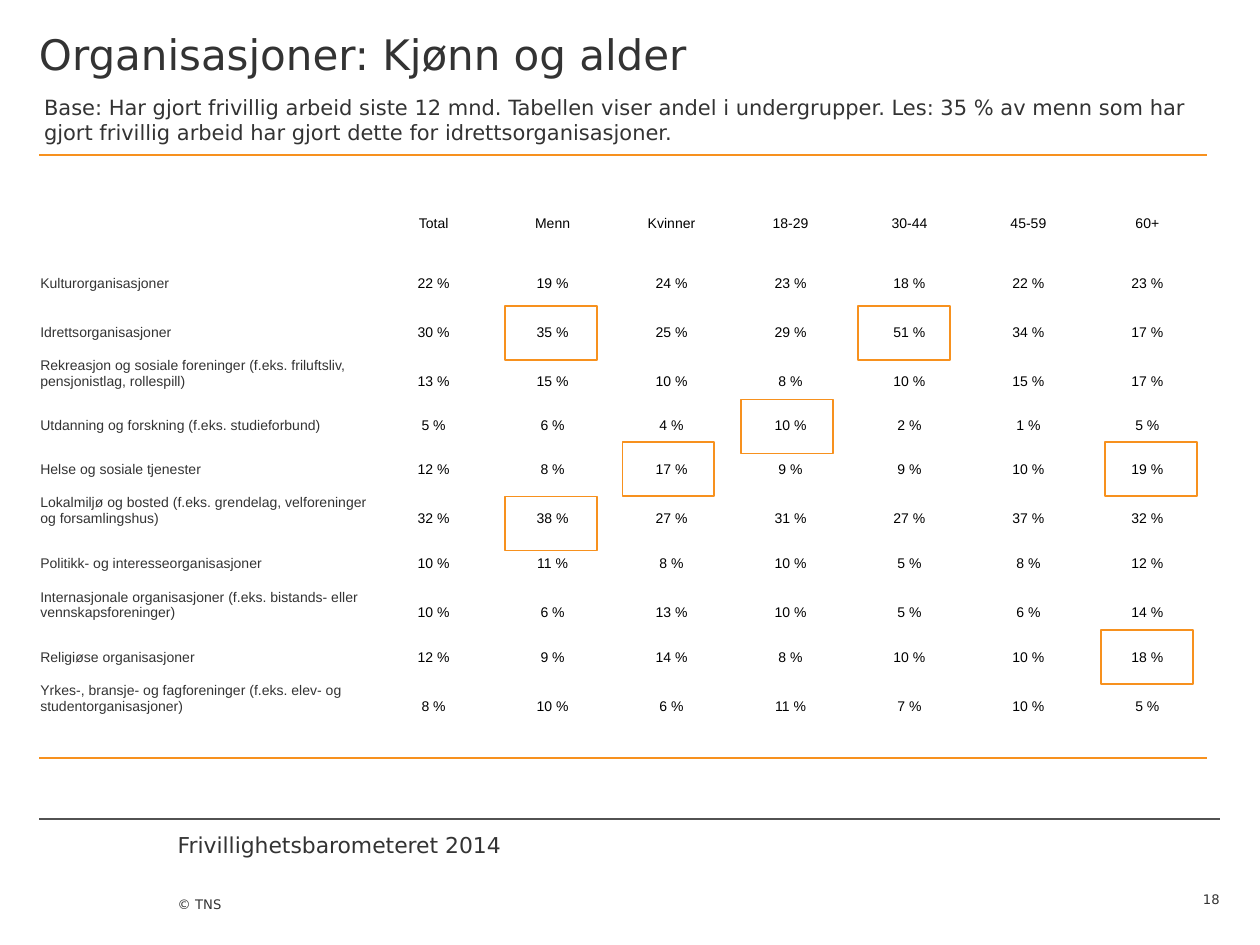
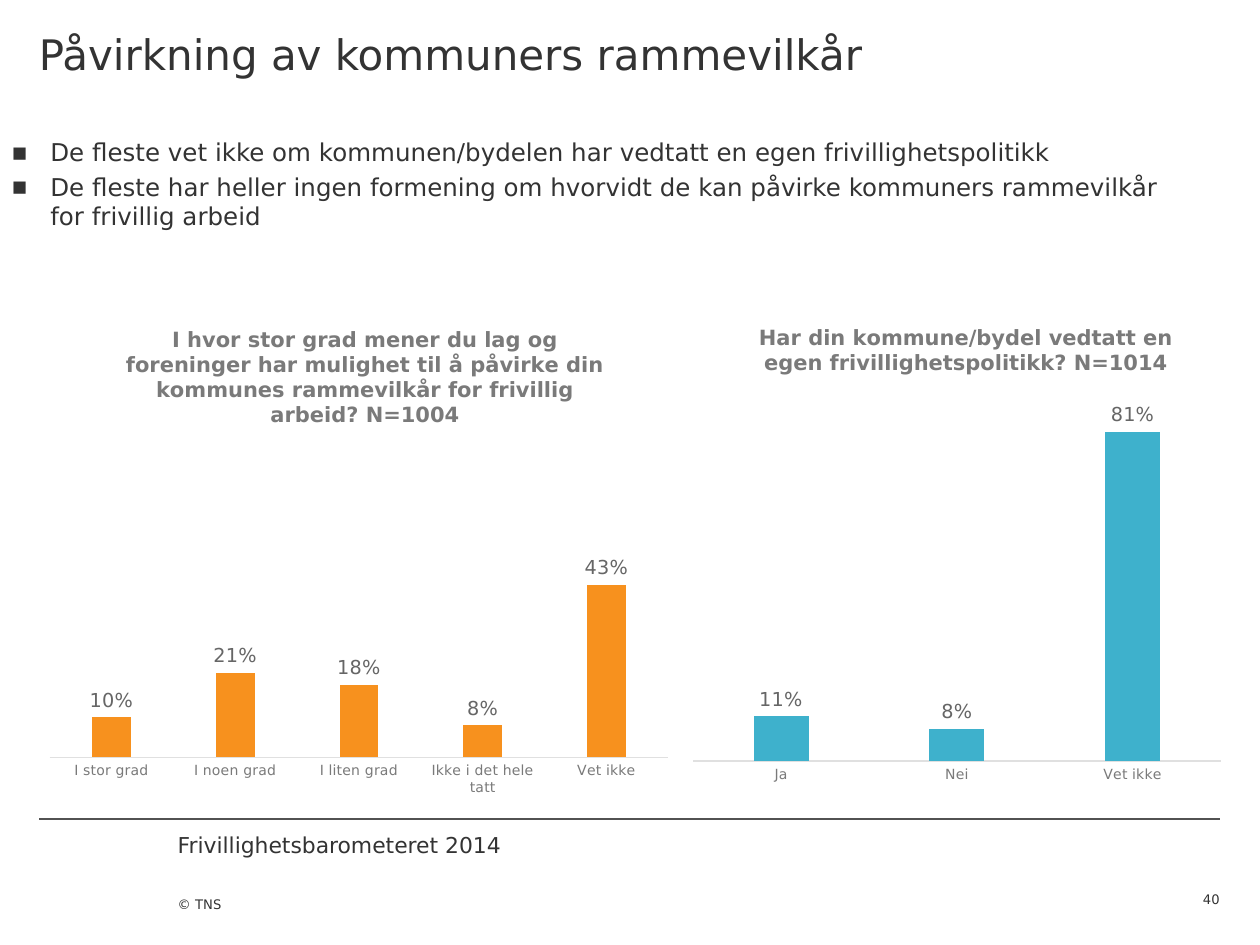
from lxml.etree import SubElement
from pptx import Presentation
from pptx.chart.data import CategoryChartData
from pptx.dml.color import RGBColor
from pptx.enum.chart import XL_CHART_TYPE, XL_LABEL_POSITION, XL_TICK_LABEL_POSITION, XL_TICK_MARK
from pptx.enum.shapes import MSO_CONNECTOR, MSO_SHAPE
from pptx.enum.text import MSO_ANCHOR, PP_ALIGN
from pptx.oxml import parse_xml
from pptx.oxml.ns import nsdecls, qn
from pptx.util import Inches, Pt

ORANGE, TEAL, DARK, BLACK = "F7911E", "3EB1CC", "333333", "000000"
RULE, AXIS, MUTED, LABEL = "525252", "E0E0E0", "7A7A7A", "666666"
SANS = "DejaVu Sans"
PLAIN_TABLE = "{2D5ABB26-0587-4C30-8999-92F81FD0307C}"
PLOT_MARGIN = 1 / 60

HEADERS = ["Total", "Menn", "Kvinner", "18-29", "30-44", "45-59", "60+"]
ORGANISATIONS = [
    ("Kulturorganisasjoner", 22, 19, 24, 23, 18, 22, 23),
    ("Idrettsorganisasjoner", 30, 35, 25, 29, 51, 34, 17),
    ("Rekreasjon og sosiale foreninger (f.eks. friluftsliv, pensjonistlag, rollespill)",
     13, 15, 10, 8, 10, 15, 17),
    ("Utdanning og forskning (f.eks. studieforbund)", 5, 6, 4, 10, 2, 1, 5),
    ("Helse og sosiale tjenester", 12, 8, 17, 9, 9, 10, 19),
    ("Lokalmiljø og bosted (f.eks. grendelag, velforeninger og forsamlingshus)",
     32, 38, 27, 31, 27, 37, 32),
    ("Politikk- og interesseorganisasjoner", 10, 11, 8, 10, 5, 8, 12),
    ("Internasjonale organisasjoner (f.eks. bistands- eller vennskapsforeninger)",
     10, 6, 13, 10, 5, 6, 14),
    ("Religiøse organisasjoner", 12, 9, 14, 8, 10, 10, 18),
    ("Yrkes-, bransje- og fagforeninger (f.eks. elev- og studentorganisasjoner)",
     8, 10, 6, 11, 7, 10, 5),
]
ROW_HEIGHTS = [0.36, 0.36, 0.36, 0.39, 0.39, 0.35, 0.35, 0.39, 0.36, 0.39, 0.35, 0.39, 0.35]
HIGHLIGHTS = [(4.01, 2.43), (4.01, 3.94), (4.94, 3.51), (5.88, 3.17),
              (6.81, 2.43), (8.77, 3.51), (8.74, 5)]


def rgb(value):
    """Turn a hex string into a colour."""
    return RGBColor.from_string(value)


def set_attrs(obj, **values):
    """Set each named attribute on an object."""
    for name, value in values.items():
        setattr(obj, name, value)


def set_font(font, size, color=DARK, name=SANS, bold=False):
    """Give a font its size, colour, face and weight."""
    set_attrs(font, size=Pt(size), name=name, bold=bold)
    font.color.rgb = rgb(color)


def set_line(line, color, width):
    """Give a line its colour and width."""
    line.color.rgb = rgb(color)
    line.width = Pt(width)


def set_layout(parent, index, **values):
    """Place a chart part by fractions of the chart."""
    for old in parent.findall(qn("c:layout")):
        parent.remove(old)
    layout = parse_xml(f"<c:layout {nsdecls('c')}/>")
    manual = SubElement(layout, qn("c:manualLayout"))
    for name, value in values.items():
        SubElement(manual, qn(f"c:{name}")).set("val", str(value))
    parent.insert(index, layout)


class Deck:
    """Hold the shared style and the current slide."""

    def __init__(self):
        """Start an empty presentation."""
        self.prs = Presentation()
        set_attrs(self.prs, slide_width=Inches(10), slide_height=Inches(7.5))
        self.s = None

    def slide(self, title, number):
        """Add a slide with its title, footer rule and footer texts."""
        self.s = self.prs.slides.add_slide(self.prs.slide_layouts[6])
        self.rule(0.31, 9.68, 6.5)
        self.text(1.41, 6.6, 3.31, 0.42, ["Frivillighetsbarometeret 2014"], 12.5)
        self.text(1.41, 6.92, 2.78, 0.58, ["© TNS"], 7.5, bottom=0.4, anchor=MSO_ANCHOR.BOTTOM)
        self.text(0.31, 0, 9.37, 1.13, [title], 24, top=0.23)
        self.text(9.13, 6.92, 0.55, 0.28, [number], 7.5, anchor=MSO_ANCHOR.BOTTOM,
                  align=PP_ALIGN.RIGHT)

    def rule(self, x1, x2, y):
        """Draw a thin horizontal line."""
        sp = self.s.shapes.add_connector(MSO_CONNECTOR.STRAIGHT, Inches(x1), Inches(y),
                                         Inches(x2), Inches(y))
        set_line(sp.line, RULE, 0.75)
        SubElement(sp._element.spPr, qn("a:effectLst"))

    def text(self, x, y, w, h, lines, size, top=0, bottom=0, anchor=MSO_ANCHOR.TOP,
             align=PP_ALIGN.LEFT, before=0, wrap=True, bullet=None):
        """Add a text box with one paragraph a line."""
        tf = self.s.shapes.add_textbox(Inches(x), Inches(y), Inches(w), Inches(h)).text_frame
        set_attrs(tf, word_wrap=wrap, vertical_anchor=anchor, margin_left=0, margin_right=0,
                  margin_top=Inches(top), margin_bottom=Inches(bottom))
        for i, line in enumerate(lines):
            p = tf.add_paragraph() if i else tf.paragraphs[0]
            p.alignment = align
            if i and before:
                p.space_before = Pt(before)
            if bullet:
                pPr = p._p.get_or_add_pPr()
                pPr.set("marL", str(Inches(0.31)))
                pPr.set("indent", str(-Inches(0.31)))
                SubElement(pPr, qn("a:buFont")).set("typeface", SANS)
                SubElement(pPr, qn("a:buChar")).set("char", bullet)
            r = p.add_run()
            r.text = line
            set_font(r.font, size)

    def cell(self, cell, text, anchor, align, color):
        """Fill one table cell."""
        cell.fill.background()
        set_attrs(cell, vertical_anchor=anchor, margin_left=Inches(0.01),
                  margin_right=Inches(0.01), margin_top=Inches(0.01), margin_bottom=0)
        if text:
            p = cell.text_frame.paragraphs[0]
            p.alignment = align
            r = p.add_run()
            r.text = text
            set_font(r.font, 8, color, "Arial")

    def border(self, cell, side):
        """Draw an orange border on one side of a cell."""
        cell._tc.get_or_add_tcPr().insert(0, parse_xml(
            f'<a:{side} {nsdecls("a")} w="{Pt(1.25)}"><a:solidFill>'
            f'<a:srgbClr val="{ORANGE}"/></a:solidFill></a:{side}>'))

    def table(self, x, y, w, h, label_width, heights, headers, records):
        """Add the percentage table with empty rows above and below."""
        blank = [""] * (len(headers) + 1)
        rows = [blank, ["", *headers]]
        rows += [[name, *(f"{v} %" for v in values)] for name, *values in records]
        rows.append(blank)
        tbl = self.s.shapes.add_table(len(rows), len(blank), Inches(x), Inches(y),
                                      Inches(w), Inches(h)).table
        set_attrs(tbl, first_row=False, horz_banding=False)
        tbl._tbl.tblPr.find(qn("a:tableStyleId")).text = PLAIN_TABLE
        for i, col in enumerate(tbl.columns):
            col.width = Inches((w - label_width) / len(headers) if i else label_width)
        for i, values in enumerate(rows):
            tbl.rows[i].height = Inches(heights[i])
            anchor = MSO_ANCHOR.MIDDLE if i == 1 else MSO_ANCHOR.BOTTOM
            for j, value in enumerate(values):
                align, color = (PP_ALIGN.CENTER, BLACK) if j else (PP_ALIGN.LEFT, DARK)
                self.cell(tbl.cell(i, j), value, anchor, align, color)
        for j in range(len(blank)):
            self.border(tbl.cell(0, j), "lnT")
            self.border(tbl.cell(len(rows) - 1, j), "lnB")

    def highlight(self, x, y):
        """Frame a table value."""
        sp = self.s.shapes.add_shape(MSO_SHAPE.RECTANGLE, Inches(x), Inches(y),
                                     Inches(0.73), Inches(0.43))
        sp.shadow.inherit = False
        sp.fill.background()
        set_line(sp.line, ORANGE, 1)

    def chart(self, x, y, w, h, title, data, color, top, plot_top, plot_height):
        """Add a titled column chart of shares."""
        cd = CategoryChartData(number_format="0%")
        cd.categories = list(data)
        cd.add_series("Series 1", list(data.values()))
        chart = self.s.shapes.add_chart(XL_CHART_TYPE.COLUMN_CLUSTERED, Inches(x), Inches(y),
                                        Inches(w), Inches(h), cd).chart
        set_attrs(chart, has_legend=False, has_title=True)
        set_font(chart.font, 10)
        p = chart.chart_title.text_frame.paragraphs[0]
        r = p.add_run()
        r.text = title
        set_font(r.font, 12, MUTED, bold=True)
        chart.chart_title.include_in_layout = False
        set_layout(chart.chart_title._element, 1, xMode="edge", yMode="edge", x=0.13, y=0.04)
        set_layout(chart._chartSpace.chart.plotArea, 0, layoutTarget="inner", xMode="edge",
                   yMode="edge", x=PLOT_MARGIN, y=plot_top, w=1 - 2 * PLOT_MARGIN,
                   h=plot_height)

        set_attrs(chart.value_axis, visible=False, has_major_gridlines=False,
                  minimum_scale=0, maximum_scale=top, major_unit=0.1)
        axis = chart.category_axis
        set_attrs(axis, major_tick_mark=XL_TICK_MARK.NONE, minor_tick_mark=XL_TICK_MARK.NONE,
                  tick_label_position=XL_TICK_LABEL_POSITION.NEXT_TO_AXIS,
                  has_major_gridlines=False)
        set_font(axis.tick_labels.font, 8, MUTED)
        set_line(axis.format.line, AXIS, 0.75)

        plot = chart.plots[0]
        set_attrs(plot, gap_width=219, overlap=-27, vary_by_categories=False,
                  has_data_labels=True)
        set_attrs(plot.data_labels, show_value=True, number_format="0%",
                  number_format_is_linked=False, position=XL_LABEL_POSITION.OUTSIDE_END)
        set_font(plot.data_labels.font, 11, LABEL)
        fill = plot.series[0].format.fill
        fill.solid()
        fill.fore_color.rgb = rgb(color)


def main():
    """Build both slides and save them."""
    deck = Deck()
    deck.slide("Organisasjoner: Kjønn og alder", "18")
    deck.table(0.31, 1.23, 9.27, 4.8, 2.66, ROW_HEIGHTS, HEADERS, ORGANISATIONS)
    for x, y in HIGHLIGHTS:
        deck.highlight(x, y)
    deck.text(0.35, 0.75, 9.1, 0.42, [
        "Base: Har gjort frivillig arbeid siste 12 mnd. Tabellen viser andel i undergrupper. "
        "Les: 35 % av menn som har",
        "gjort frivillig arbeid har gjort dette for idrettsorganisasjoner.",
    ], 12, wrap=False)

    deck.slide("Påvirkning av kommuners rammevilkår", "40")
    deck.chart(0.31, 2.39, 5.08, 3.98,
               "I hvor stor grad mener du lag og foreninger har mulighet til å påvirke din "
               "kommunes rammevilkår for frivillig arbeid? N=1004",
               {"I stor grad": 0.1, "I noen grad": 0.21, "I liten grad": 0.18,
                "Ikke i det hele tatt": 0.08, "Vet ikke": 0.43}, ORANGE, 0.5, 0.51, 0.4)
    deck.chart(5.43, 2.38, 4.33, 3.98,
               "Har din kommune/bydel vedtatt en egen frivillighetspolitikk? N=1014",
               {"Ja": 0.11, "Nei": 0.08, "Vet ikke": 0.81}, TEAL, 0.9, 0.19, 0.73)
    deck.text(0.09, 0.86, 9.37, 0.83, [
        "De fleste vet ikke om kommunen/bydelen har vedtatt en egen frivillighetspolitikk",
        "De fleste har heller ingen formening om hvorvidt de kan påvirke kommuners "
        "rammevilkår for frivillig arbeid",
    ], 14, top=0.23, before=2.8, bullet="▪")
    deck.prs.save("out.pptx")


if __name__ == "__main__":
    main()
